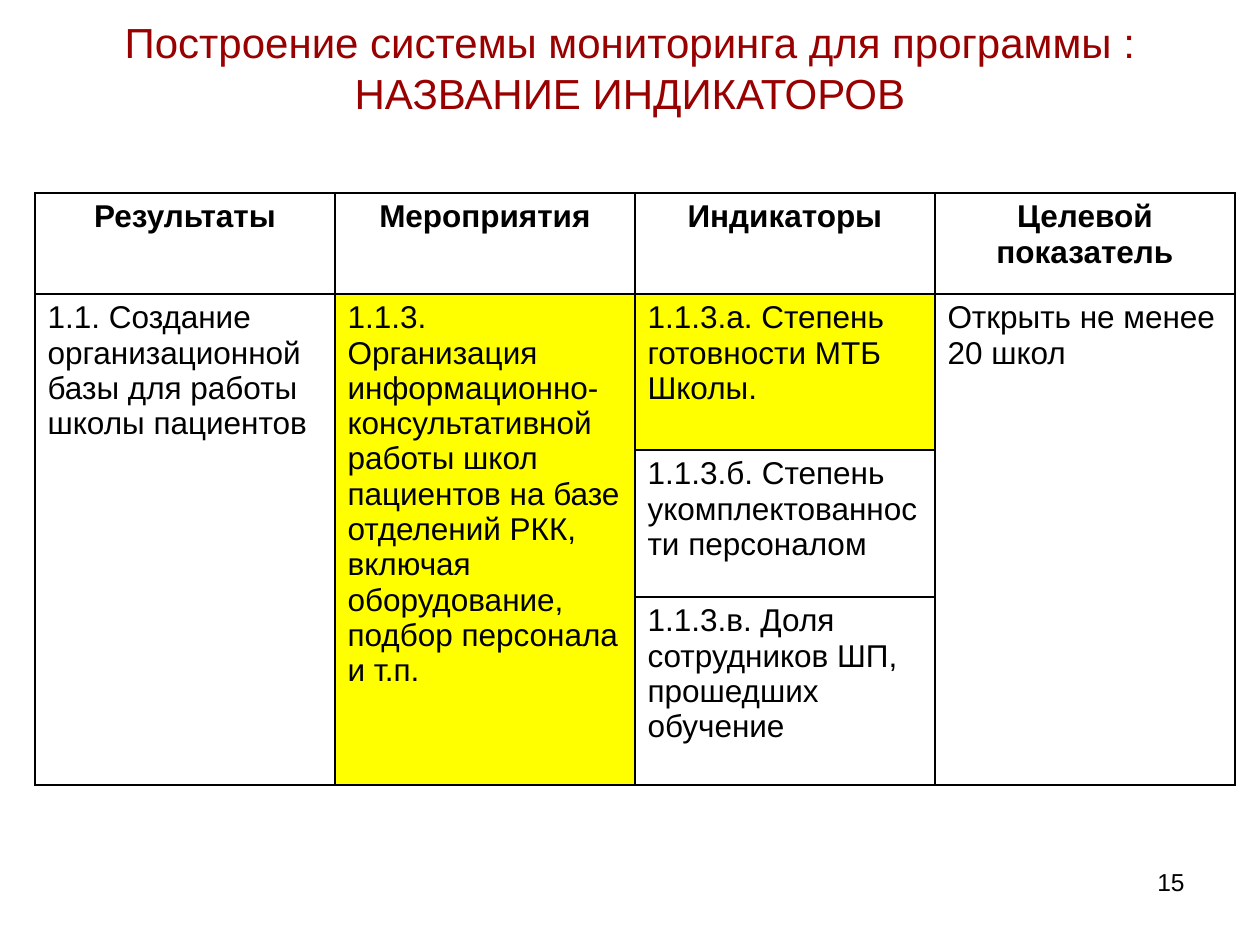
from lxml.etree import SubElement
from pptx import Presentation
from pptx.dml.color import RGBColor
from pptx.enum.text import PP_ALIGN as Align
from pptx.oxml.ns import qn
from pptx.util import Emu, Pt

EMU_PER_PX = 914400 // 126
COLORS = {"title": "990000", "text": "000000", "border": "000000", "highlight": "FFFF00"}
COLUMN_WIDTH = 300
ROW_HEIGHTS = [101, 156, 147, 188]
HEADERS = ["Результаты", "Мероприятия", "Индикаторы", "Целевой показатель"]
RESULT = "1.1. Создание организационной базы для работы школы пациентов"
ACTIVITY = (
    "1.1.3. Организация информационно-консультативной работы школ пациентов "
    "на базе отделений РКК, включая оборудование, подбор персонала и т.п."
)
INDICATORS = [
    "1.1.3.а. Степень готовности МТБ Школы.",
    "1.1.3.б. Степень укомплектованности персоналом",
    "1.1.3.в. Доля сотрудников ШП, прошедших обучение",
]
TARGET = "Открыть не менее 20 школ"
MERGED_COLUMNS = [0, 1, 3]
HIGHLIGHTED = [(1, 1), (1, 2)]


def px(length):
    return Emu(length * EMU_PER_PX)


def style_paragraph(para, size, color="text", align=Align.LEFT, bold=False):
    para.alignment = align
    para.font.name = "Arial"
    para.font.size = Pt(size)
    para.font.bold = bold
    para.font.color.rgb = RGBColor.from_string(COLORS[color])


def add_text(slide, left, top, width, height, text, size, color, align):
    box = slide.shapes.add_textbox(px(left), px(top), px(width), px(height))
    frame = box.text_frame
    frame.word_wrap = True
    frame.text = text
    para = frame.paragraphs[0]
    style_paragraph(para, size, color, align)
    return frame


def add_title(slide):
    text = "Построение системы мониторинга для программы :\vНАЗВАНИЕ ИНДИКАТОРОВ"
    frame = add_text(slide, 63, 16, 1134, 149, text, 24, "title", Align.CENTER)
    frame.margin_top = 0
    frame.paragraphs[0].line_spacing = Pt(29)


def set_borders(cell):
    properties = cell._tc.get_or_add_tcPr()
    for side in ("lnL", "lnR", "lnT", "lnB"):
        line = SubElement(properties, qn(f"a:{side}"), w=str(Pt(1)))
        fill = SubElement(line, qn("a:solidFill"))
        SubElement(fill, qn("a:srgbClr"), val=COLORS["border"])


def fill_cell(cell, text, is_header, highlighted):
    set_borders(cell)
    if highlighted:
        cell.fill.solid()
        cell.fill.fore_color.rgb = RGBColor.from_string(COLORS["highlight"])
    else:
        cell.fill.background()
    cell.text = text
    align = Align.CENTER if is_header else Align.LEFT
    style_paragraph(cell.text_frame.paragraphs[0], 18, align=align, bold=is_header)


def add_indicator_table(slide):
    rows = [HEADERS, [RESULT, ACTIVITY, INDICATORS[0], TARGET]]
    rows += [["", "", indicator, ""] for indicator in INDICATORS[1:]]
    width = COLUMN_WIDTH * len(HEADERS)
    frame = slide.shapes.add_table(
        len(rows), len(HEADERS), px(35), px(193), px(width), px(sum(ROW_HEIGHTS))
    )
    table = frame.table
    table.first_row = False
    table.horz_banding = False
    for column in table.columns:
        column.width = px(COLUMN_WIDTH)
    for row, height in zip(table.rows, ROW_HEIGHTS):
        row.height = px(height)
    for row_index, texts in enumerate(rows):
        for column_index, text in enumerate(texts):
            position = (row_index, column_index)
            fill_cell(table.cell(*position), text, row_index == 0, position in HIGHLIGHTED)
    for column_index in MERGED_COLUMNS:
        table.cell(1, column_index).merge(table.cell(len(rows) - 1, column_index))


def main():
    deck = Presentation()
    deck.slide_width, deck.slide_height = px(1260), px(945)
    page = deck.slides.add_slide(deck.slide_layouts[6])
    add_text(page, 903, 861, 294, 66, "15", 14, "text", Align.RIGHT)
    add_title(page)
    add_indicator_table(page)
    deck.save("out.pptx")


if __name__ == "__main__":
    main()
